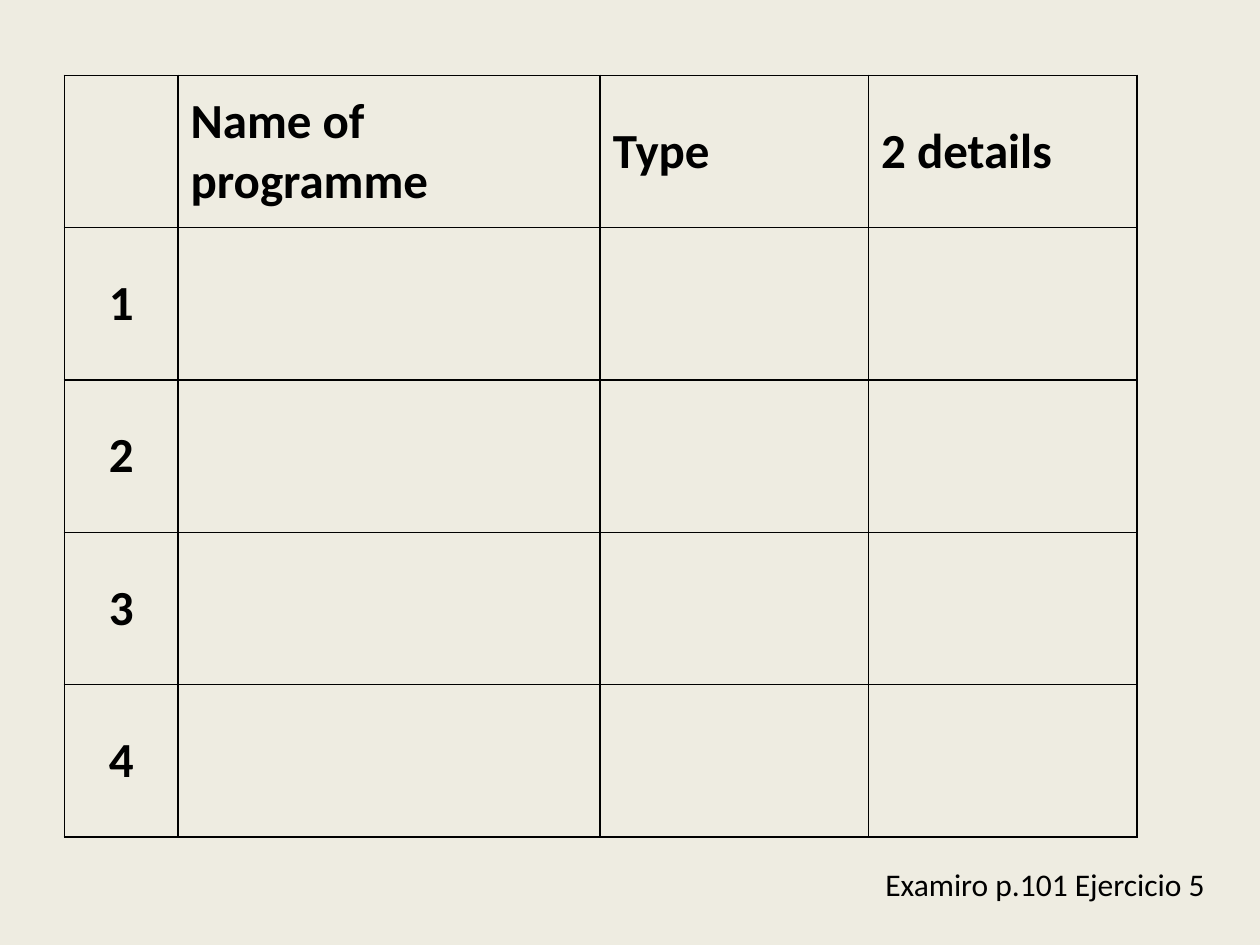
import dataclasses
from typing import Any

import lxml.etree
import pptx
import pptx.dml.color
import pptx.enum.text
import pptx.oxml.ns
import pptx.util

Cm = pptx.util.Cm
Pt = pptx.util.Pt
ALIGN = pptx.enum.text.PP_ALIGN
INK = "000000"
PAPER = "EEECE1"


@dataclasses.dataclass(frozen=True)
class Label:
    text: str
    size: float
    bold: bool
    align: Any


@dataclasses.dataclass(frozen=True)
class Column:
    heading: str
    width: float


COLUMNS = [
    Column("", 2.29),
    Column("Name of programme", 8.51),
    Column("Type", 5.41),
    Column("2 details", 5.41),
]
ROW_COUNT = 5
ROW_HEIGHT = 3.07


def rgb(value: str) -> pptx.dml.color.RGBColor:
    return pptx.dml.color.RGBColor.from_string(value)


def write(tf: Any, label: Label) -> None:
    p = tf.paragraphs[0]
    p.alignment = label.align
    r = p.add_run()
    r.text = label.text
    font = {"name": "Calibri", "size": Pt(label.size), "bold": label.bold}
    for name, value in font.items():
        setattr(r.font, name, value)
    r.font.color.rgb = rgb(INK)


def set_borders(cell: Any, colour: str, width: float) -> None:
    qn = pptx.oxml.ns.qn
    tc_pr = cell._tc.get_or_add_tcPr()
    for side in ("lnL", "lnR", "lnT", "lnB"):
        ln = lxml.etree.SubElement(tc_pr, qn(f"a:{side}"), w=str(Pt(width)))
        fill = lxml.etree.SubElement(ln, qn("a:solidFill"))
        lxml.etree.SubElement(fill, qn("a:srgbClr"), val=colour)


def draw_cell(cell: Any, label: Label) -> None:
    set_borders(cell, INK, 1)
    cell.fill.background()
    cell.vertical_anchor = pptx.enum.text.MSO_ANCHOR.MIDDLE
    if label.text:
        write(cell.text_frame, label)


def draw_table(s: Any, left: float, top: float) -> None:
    width = sum(column.width for column in COLUMNS)
    table = s.shapes.add_table(
        ROW_COUNT, len(COLUMNS), Cm(left), Cm(top), Cm(width), Cm(ROW_HEIGHT * ROW_COUNT)
    ).table
    for name, value in {"first_row": False, "horz_banding": False}.items():
        setattr(table, name, value)
    for row in table.rows:
        row.height = Cm(ROW_HEIGHT)
    for j, column in enumerate(COLUMNS):
        table.columns[j].width = Cm(column.width)
        for i in range(ROW_COUNT):
            text = column.heading if i == 0 else str(i) if j == 0 else ""
            align = ALIGN.CENTER if j == 0 else ALIGN.LEFT
            draw_cell(table.cell(i, j), Label(text, 28, True, align))


def draw_source(s: Any, label: Label) -> None:
    sp = s.shapes.add_textbox(Cm(12.04), Cm(17.32), Cm(12.5), Cm(1.02))
    tf = sp.text_frame
    frame = {"word_wrap": True, "auto_size": pptx.enum.text.MSO_AUTO_SIZE.SHAPE_TO_FIT_TEXT}
    for name, value in frame.items():
        setattr(tf, name, value)
    write(tf, label)


def main() -> None:
    prs = pptx.Presentation()
    prs.slide_width, prs.slide_height = Cm(25.4), Cm(19.05)
    s = prs.slides.add_slide(prs.slide_layouts[6])
    s.background.fill.solid()
    s.background.fill.fore_color.rgb = rgb(PAPER)
    draw_table(s, 1.3, 1.52)
    draw_source(s, Label("Examiro p.101 Ejercicio 5", 18, False, ALIGN.RIGHT))
    prs.save("out.pptx")


if __name__ == "__main__":
    main()
